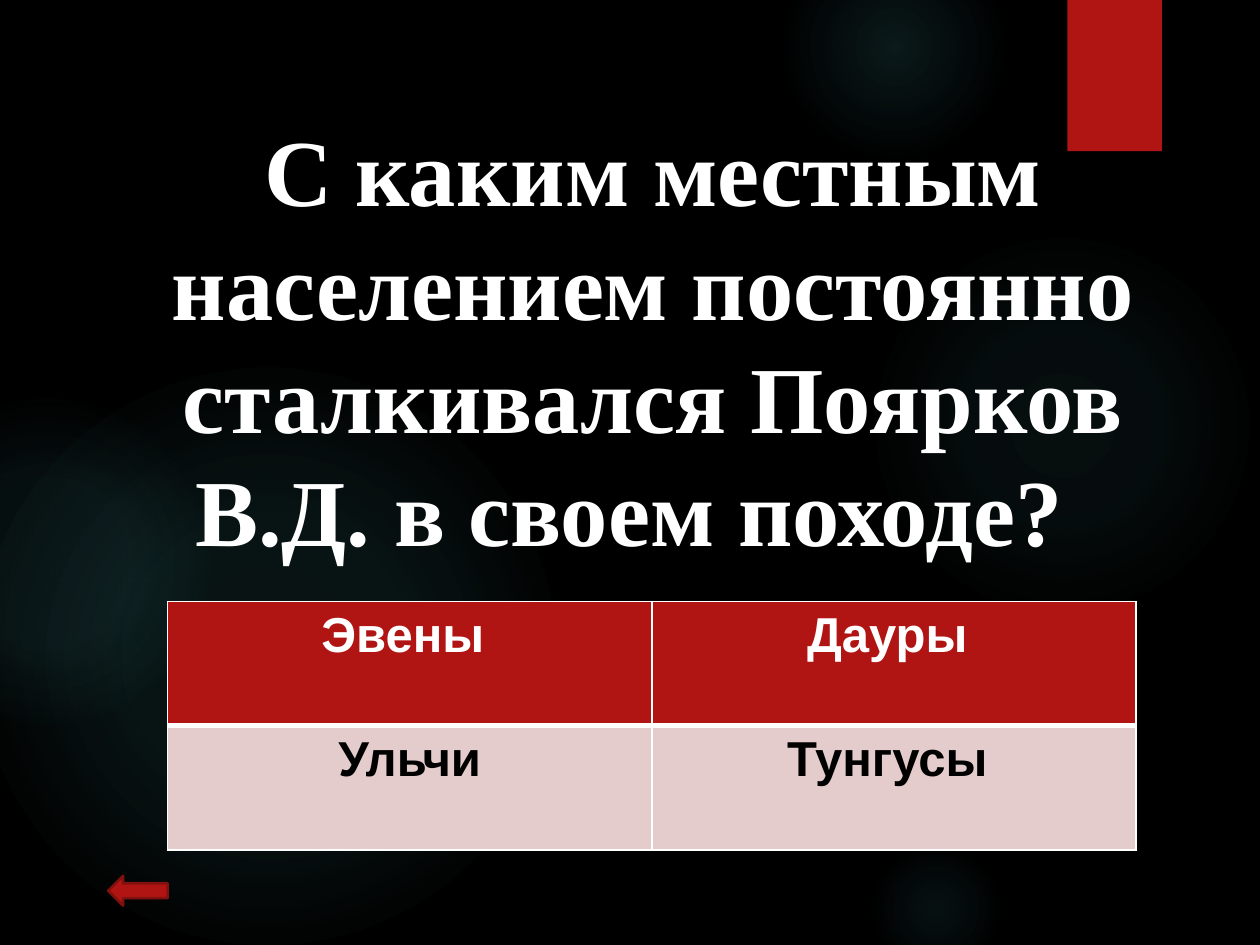
from lxml.etree import SubElement
from pptx import Presentation
from pptx.dml.color import RGBColor
from pptx.enum.shapes import MSO_SHAPE
from pptx.enum.text import MSO_ANCHOR, MSO_AUTO_SIZE, PP_ALIGN
from pptx.oxml import parse_xml
from pptx.oxml.ns import nsdecls, qn
from pptx.util import Pt

RED, DARK_RED, PINK = "B01513", "82100E", "E4CCCC"
WHITE, BLACK, TEAL = "FFFFFF", "000000", "50B9C1"
GLOWS = [
    (496, 132, 222, (7, 6), 69),
    (448, -36, 126, (14, 7), 73),
    (496, 480, 78, (9, 5), 66),
    (-12, 210, 330, (11, 10), 75),
    (-66, 228, 186, (8, 8), 72),
]
QUESTION = "С каким местным населением постоянно сталкивался Поярков В.Д. в своем походе?  "
ANSWERS = [["Эвены ", "Дауры "], ["Ульчи", "Тунгусы "]]


def color(value):
    """Turn a hex string into a colour."""
    return RGBColor.from_string(value)


def style_text(paragraph, font_name, size, text_color):
    """Centre a paragraph and format its runs in bold."""
    paragraph.alignment = PP_ALIGN.CENTER
    for span in paragraph.runs:
        span.font.name = font_name
        span.font.size = Pt(size)
        span.font.bold = True
        span.font.color.rgb = color(text_color)


def add_shape(page, kind, left, top, width, height, fill=RED):
    """Add a filled shape without line or shadow."""
    shape = page.shapes.add_shape(kind, Pt(left), Pt(top), Pt(width), Pt(height))
    shape.shadow.inherit = False
    shape.fill.solid()
    shape.fill.fore_color.rgb = color(fill)
    shape.line.fill.background()
    return shape


def add_glow(page, left, top, size, opacities, edge):
    """Add a circle that fades from its centre to transparent."""
    glow = add_shape(page, MSO_SHAPE.OVAL, left, top, size, size, TEAL)
    stops = "".join(
        f'<a:gs pos="{position * 1000}"><a:srgbClr val="{TEAL}">'
        f'<a:alpha val="{opacity * 1000}"/></a:srgbClr></a:gs>'
        for position, opacity in zip((0, 36, edge), (*opacities, 0))
    )
    gradient = parse_xml(
        f'<a:gradFill {nsdecls("a")}><a:gsLst>{stops}</a:gsLst><a:path path="circle">'
        '<a:fillToRect l="50000" t="50000" r="50000" b="50000"/></a:path></a:gradFill>'
    )
    properties = glow.element.spPr
    properties.replace(properties.find(qn("a:solidFill")), gradient)


def add_backdrop(page):
    """Paint the black background, its glows and the red tab."""
    page.background.fill.solid()
    page.background.fill.fore_color.rgb = color(BLACK)
    for glow in GLOWS:
        add_glow(page, *glow)
    add_shape(page, MSO_SHAPE.RECTANGLE, 610, 0, 54, 86.4)


def add_back_arrow(page, left, top, width, height):
    """Add the outlined arrow that points back."""
    arrow = add_shape(page, MSO_SHAPE.LEFT_ARROW, left, top, width, height)
    arrow.line.color.rgb = color(DARK_RED)
    arrow.line.width = Pt(1.5)


def place_question(page, left, top, width, height):
    """Put the question into the title placeholder, above the backdrop."""
    title = page.shapes.title
    title.left, title.top, title.width, title.height = map(Pt, (left, top, width, height))
    title.element.getparent().append(title.element)
    frame = title.text_frame
    frame.text = QUESTION
    frame.word_wrap = True
    frame.auto_size = MSO_AUTO_SIZE.NONE
    frame.vertical_anchor = MSO_ANCHOR.TOP
    style_text(frame.paragraphs[0], "Times New Roman", 54, WHITE)


def set_borders(cell, top, bottom):
    """Draw white cell borders with the given top and bottom widths."""
    properties = cell._tc.get_or_add_tcPr()
    for index, (side, width) in enumerate(zip("LRTB", (1, 1, top, bottom))):
        line = SubElement(properties, qn(f"a:ln{side}"), w=str(Pt(width)))
        properties.insert(index, line)
        SubElement(SubElement(line, qn("a:solidFill")), qn("a:srgbClr"), val=WHITE)


def add_answers(page, left, top, width, height):
    """Add the table of answers with a red first row."""
    frame = page.shapes.add_table(
        len(ANSWERS), len(ANSWERS[0]), Pt(left), Pt(top), Pt(width), Pt(height)
    )
    row_styles = [(RED, WHITE, 1, 3), (PINK, BLACK, 3, 1)]
    for row, answers, style in zip(frame.table.rows, ANSWERS, row_styles):
        fill, text_color, top_width, bottom_width = style
        for cell, answer in zip(row.cells, answers):
            cell.text_frame.text = answer
            style_text(cell.text_frame.paragraphs[0], "Arial", 28, text_color)
            cell.fill.solid()
            cell.fill.fore_color.rgb = color(fill)
            set_borders(cell, top_width, bottom_width)


def main():
    """Build the quiz slide and save it."""
    deck = Presentation()
    deck.slide_width, deck.slide_height = Pt(720), Pt(540)
    page = deck.slides.add_slide(deck.slide_layouts[5])
    add_backdrop(page)
    add_back_arrow(page, 61.8, 500.5, 34, 17)
    place_question(page, 77.8, 60.5, 590.4, 269.3)
    add_answers(page, 95.7, 343.8, 553.6, 141.8)
    deck.save("out.pptx")


if __name__ == "__main__":
    main()
